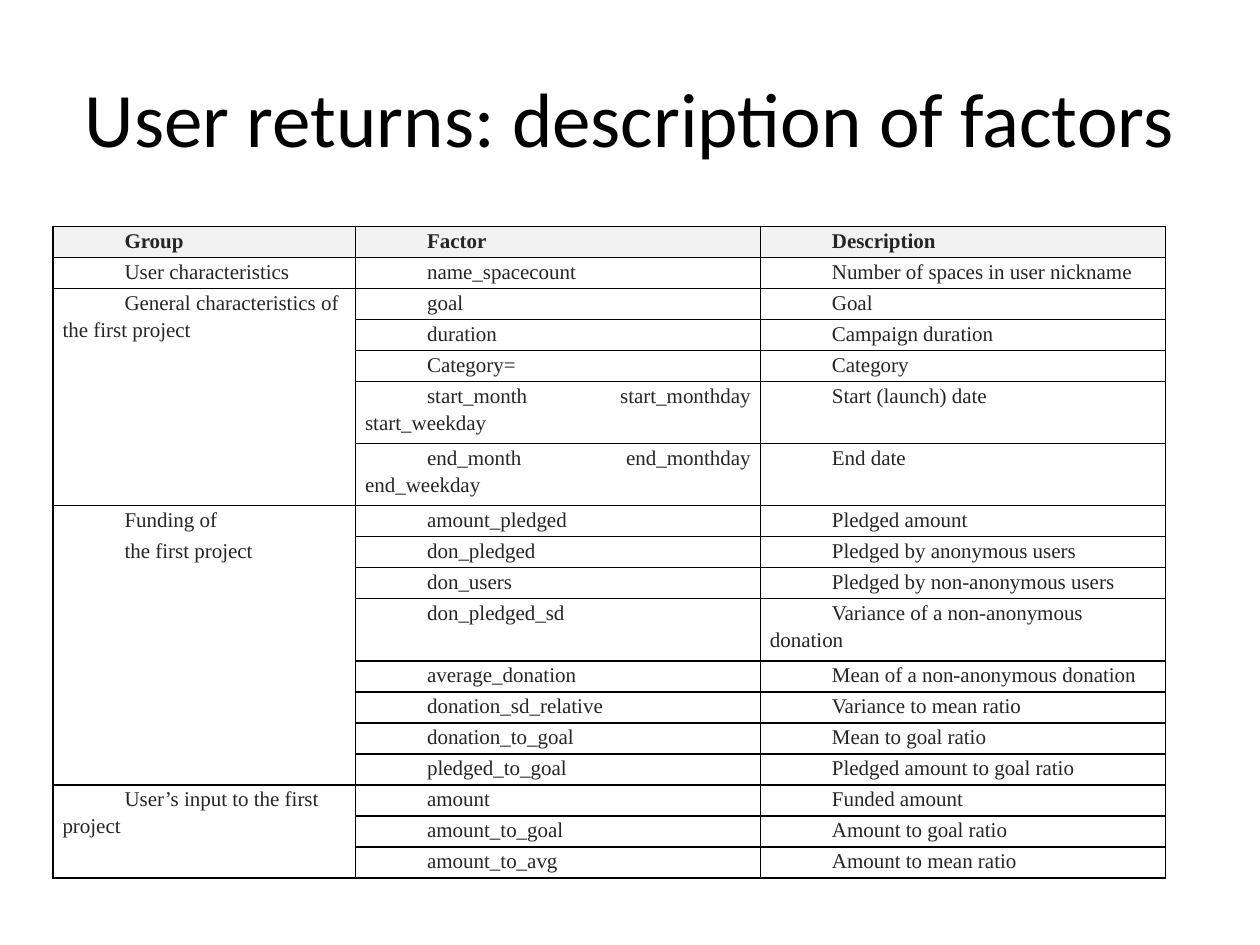
from lxml import etree
from pptx import Presentation
from pptx.dml.color import RGBColor
from pptx.enum.text import MSO_ANCHOR, PP_ALIGN
from pptx.oxml.ns import qn
from pptx.util import Cm, Pt

LEFT, CENTER, JUSTIFY = PP_ALIGN.LEFT, PP_ALIGN.CENTER, PP_ALIGN.JUSTIFY
MIDDLE = MSO_ANCHOR.MIDDLE

TITLE = "User returns: description of factors"
HEADER = ("Group", "Factor", "Description")
GROUPS = [
    ("User characteristics", [
        ("name_spacecount", "Number of spaces in user nickname"),
    ]),
    ("General characteristics of the first project", [
        ("goal", "Goal"),
        ("duration", "Campaign duration"),
        ("Category=", "Category"),
        ("start_month start_monthday start_weekday", "Start (launch) date"),
        ("end_month end_monthday end_weekday", "End date"),
    ]),
    ("Funding of\nthe first project", [
        ("amount_pledged", "Pledged amount"),
        ("don_pledged", "Pledged by anonymous users"),
        ("don_users", "Pledged by non-anonymous users"),
        ("don_pledged_sd", "Variance of a non-anonymous donation"),
        ("average_donation", "Mean of a non-anonymous donation"),
        ("donation_sd_relative", "Variance to mean ratio"),
        ("donation_to_goal", "Mean to goal ratio"),
        ("pledged_to_goal", "Pledged amount to goal ratio"),
    ]),
    ("User’s input to the first project", [
        ("amount", "Funded amount"),
        ("amount_to_goal", "Amount to goal ratio"),
        ("amount_to_avg", "Amount to mean ratio"),
    ]),
]
COL_WIDTHS = (6.1, 8.16, 8.16)
ROW_HEIGHT = 0.625
WRAP_AT = 33
ALIGNS = (LEFT, JUSTIFY, LEFT)


def rgb(value):
    return RGBColor.from_string(value)


def write(tf, text, font="Times New Roman", size=12, color="252525",
          bold=False, align=LEFT, indent=None, line=None, space=0):
    for i, part in enumerate(text.split("\n")):
        p = tf.paragraphs[0] if i == 0 else tf.add_paragraph()
        p.alignment = align
        p.space_before = p.space_after = Pt(space)
        if line:
            p.line_spacing = line
        if indent:
            pPr = p._p.get_or_add_pPr()
            pPr.set("marL", "0")
            pPr.set("indent", str(Cm(indent)))
        r = p.add_run()
        r.text = part
        r.font.name = font
        r.font.size = Pt(size)
        r.font.bold = bold
        r.font.color.rgb = rgb(color)


def add_borders(cell, color="000000", width=1):
    tcPr = cell._tc.get_or_add_tcPr()
    for side in ("a:lnL", "a:lnR", "a:lnT", "a:lnB"):
        ln = etree.SubElement(tcPr, qn(side), w=str(Pt(width)))
        fill = etree.SubElement(ln, qn("a:solidFill"))
        etree.SubElement(fill, qn("a:srgbClr"), val=color)


def write_cell(cell, text, **fmt):
    write(cell.text_frame, text, indent=1.25, line=1.15, space=1, **fmt)


prs = Presentation()
prs.slide_width, prs.slide_height = Cm(25.4), Cm(19.05)
s = prs.slides.add_slide(prs.slide_layouts[5])

title = s.shapes.title
title.left, title.top, title.width, title.height = Cm(1.27), Cm(0.76), Cm(22.86), Cm(3.18)
title.text_frame.vertical_anchor = MIDDLE
write(title.text_frame, TITLE, font="Calibri", size=44, color="000000", align=CENTER)

rows = [HEADER[1:]] + [row for _, factors in GROUPS for row in factors]
heights = [ROW_HEIGHT * (2 if max(map(len, row)) > WRAP_AT else 1) for row in rows]
table = s.shapes.add_table(len(rows), len(HEADER), Cm(1.07), Cm(4.57),
                           Cm(sum(COL_WIDTHS)), Cm(sum(heights))).table
table.first_row = table.horz_banding = False
for column, width in zip(table.columns, COL_WIDTHS):
    column.width = Cm(width)

for i, (row, height) in enumerate(zip(rows, heights)):
    table.rows[i].height = Cm(height)
    for j in range(len(HEADER)):
        cell = table.cell(i, j)
        cell.margin_left = cell.margin_right = Cm(0.19)
        cell.margin_top = cell.margin_bottom = 0
        add_borders(cell)
        if i == 0:
            cell.fill.solid()
            cell.fill.fore_color.rgb = rgb("F2F2F2")
        else:
            cell.fill.background()
        if j:
            write_cell(cell, row[j - 1], bold=i == 0, align=ALIGNS[j])

write_cell(table.cell(0, 0), HEADER[0], bold=True)
first = 1
for group, factors in GROUPS:
    last = first + len(factors) - 1
    cell = table.cell(first, 0)
    if last > first:
        cell.merge(table.cell(last, 0))
    write_cell(cell, group)
    first = last + 1

prs.save("out.pptx")
